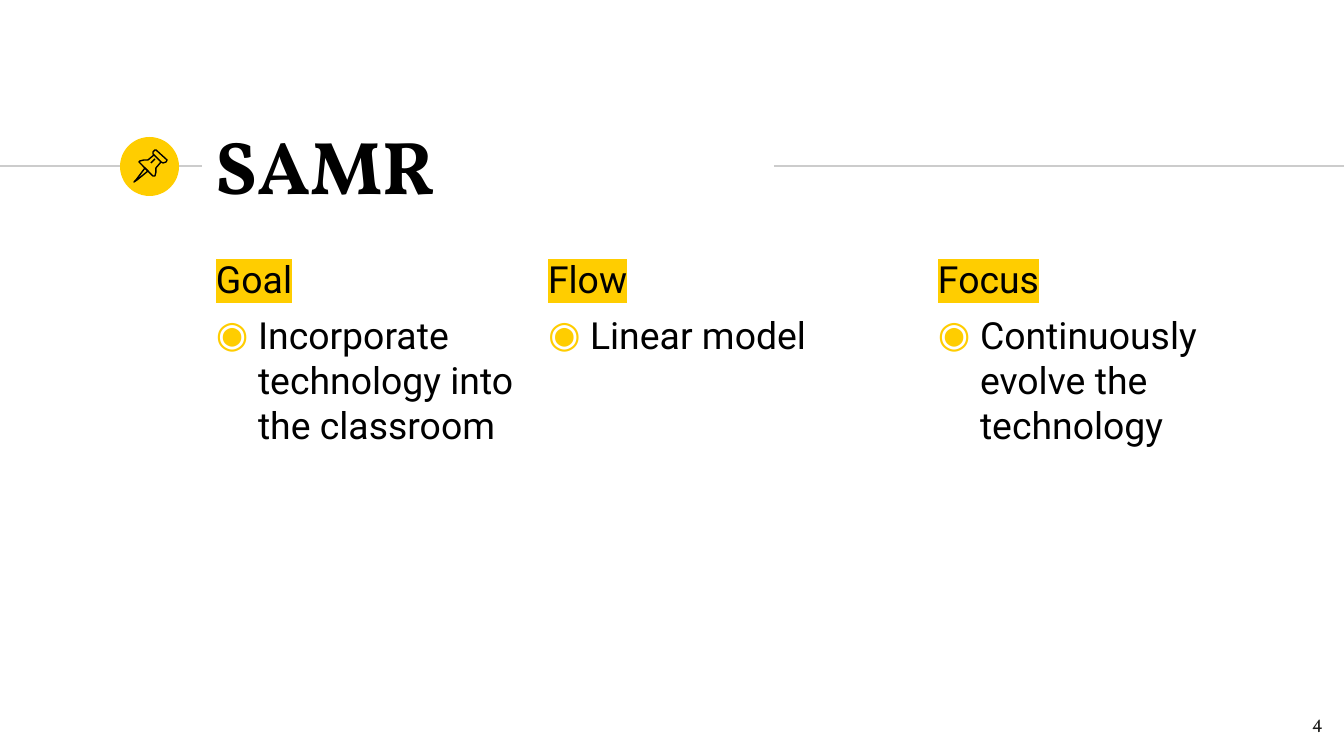
from lxml.etree import SubElement
from pptx import Presentation
from pptx.dml.color import RGBColor
from pptx.enum.shapes import MSO_CONNECTOR as Connector, MSO_SHAPE as Shape
from pptx.enum.text import MSO_ANCHOR as Anchor, MSO_AUTO_SIZE as AutoSize, PP_ALIGN as Align
from pptx.oxml.ns import qn
from pptx.util import Pt

PX = 914400 * 10 / 1344
COLORS = {"ink": "000000", "number": "1D1D1B", "accent": "FFCD00", "rule": "CCCCCC"}
COLUMNS = [
    (203, "Goal", "Incorporate technology into the classroom"),
    (535, "Flow", "Linear model"),
    (925, "Focus", "Continuously evolve the technology"),
]
NEEDLE = [(145, 168), (136, 180), (134, 182), (137, 180), (148, 171)]
CAP = [(154, 155), (161, 162), (163, 163), (166, 162), (167, 160),
       (156, 150), (155, 150), (153, 152), (153, 154)]
PIN_BODY = [(154, 155), (148, 160), (144, 160), (140, 161), (139, 162),
            (153, 176), (155, 176), (156, 172), (156, 168), (161, 162)]


def px(length):
    return round(length * PX)


def rgb(name):
    return RGBColor.from_string(COLORS[name])


def place(shape, left, top, width, height):
    shape.left, shape.top = px(left), px(top)
    shape.width, shape.height = px(width), px(height)


def prepare_frame(shape, anchor=Anchor.TOP):
    frame = shape.text_frame
    frame.word_wrap = True
    frame.auto_size = AutoSize.NONE
    frame.vertical_anchor = anchor
    frame.margin_left = frame.margin_right = px(13)
    frame.margin_top = frame.margin_bottom = px(13)
    return frame


def style_paragraph(paragraph, font_name, size, color="ink", bold=False, align=Align.LEFT):
    paragraph.alignment = align
    font = paragraph.font
    font.name, font.size, font.bold = font_name, Pt(size), bold
    font.color.rgb = rgb(color)


def add_accent(parent, tag):
    """Add a DrawingML colour element holding the accent colour."""
    SubElement(SubElement(parent, qn(tag)), qn("a:srgbClr"), val=COLORS["accent"])


def set_bullet(paragraph, char=None, indent=0):
    properties = paragraph._p.get_or_add_pPr()
    properties.set("marL", str(px(indent)))
    properties.set("indent", str(-px(indent)))
    if char:
        add_accent(properties, "a:buClr")
        SubElement(properties, qn("a:buChar"), char=char)
    else:
        SubElement(properties, qn("a:buNone"))


def fill_title(title, text):
    place(title, 203, 132, 564, 65)
    frame = prepare_frame(title, Anchor.MIDDLE)
    frame.text = text
    style_paragraph(frame.paragraphs[0], "Vollkorn", 40, bold=True)


def fill_column(body, left, heading, point):
    place(body, left, 243, 343, 458)
    frame = prepare_frame(body)
    frame.text = f"{heading}\n{point}"
    heading_line, point_line = frame.paragraphs
    set_bullet(heading_line)
    set_bullet(point_line, "◉", 42)
    for paragraph in frame.paragraphs:
        paragraph.space_before = Pt(6)
        style_paragraph(paragraph, "Roboto", 20, bold=paragraph is heading_line)
    add_accent(heading_line.runs[0]._r.get_or_add_rPr(), "a:highlight")


def add_line(slide, start, end, color):
    line = slide.shapes.add_connector(Connector.STRAIGHT, *map(px, start + end))
    line.line.color.rgb = rgb(color)
    line.line.width = Pt(0.75)
    SubElement(line._element.spPr, qn("a:effectLst"))


def add_outline(slide, points, close=True):
    builder = slide.shapes.build_freeform(*points[0], scale=PX)
    builder.add_line_segments(points[1:], close=close)
    outline = builder.convert_to_shape()
    outline.shadow.inherit = False
    outline.fill.background()
    outline.line.color.rgb = rgb("ink")
    outline.line.width = Pt(0.75)


def add_pin_badge(slide):
    badge = slide.shapes.add_shape(Shape.OVAL, px(120), px(137), px(59), px(59))
    badge.shadow.inherit = False
    badge.fill.solid()
    badge.fill.fore_color.rgb = rgb("accent")
    badge.line.fill.background()
    add_outline(slide, NEEDLE)
    add_outline(slide, CAP)
    add_outline(slide, PIN_BODY, close=False)
    add_line(slide, (151, 163), (155, 159), "ink")


def add_page_number(slide, number):
    box = slide.shapes.add_textbox(px(1255), px(698), px(81), px(58))
    frame = prepare_frame(box)
    frame.text = number
    style_paragraph(frame.paragraphs[0], "Vollkorn", 10, "number", align=Align.RIGHT)


def main():
    deck = Presentation()
    deck.slide_width, deck.slide_height = px(1344), px(756)
    slide = deck.slides.add_slide(deck.slide_layouts.get_by_name("Comparison"))
    title, *bodies = slide.placeholders
    fill_title(title, "SAMR")
    for body, column in zip(bodies, COLUMNS):
        fill_column(body, *column)
    for unused in bodies[len(COLUMNS):]:
        unused._element.getparent().remove(unused._element)
    add_line(slide, (0, 166), (202, 166), "rule")
    add_line(slide, (774, 166), (1344, 166), "rule")
    add_pin_badge(slide)
    add_page_number(slide, "4")
    deck.save("out.pptx")


if __name__ == "__main__":
    main()
